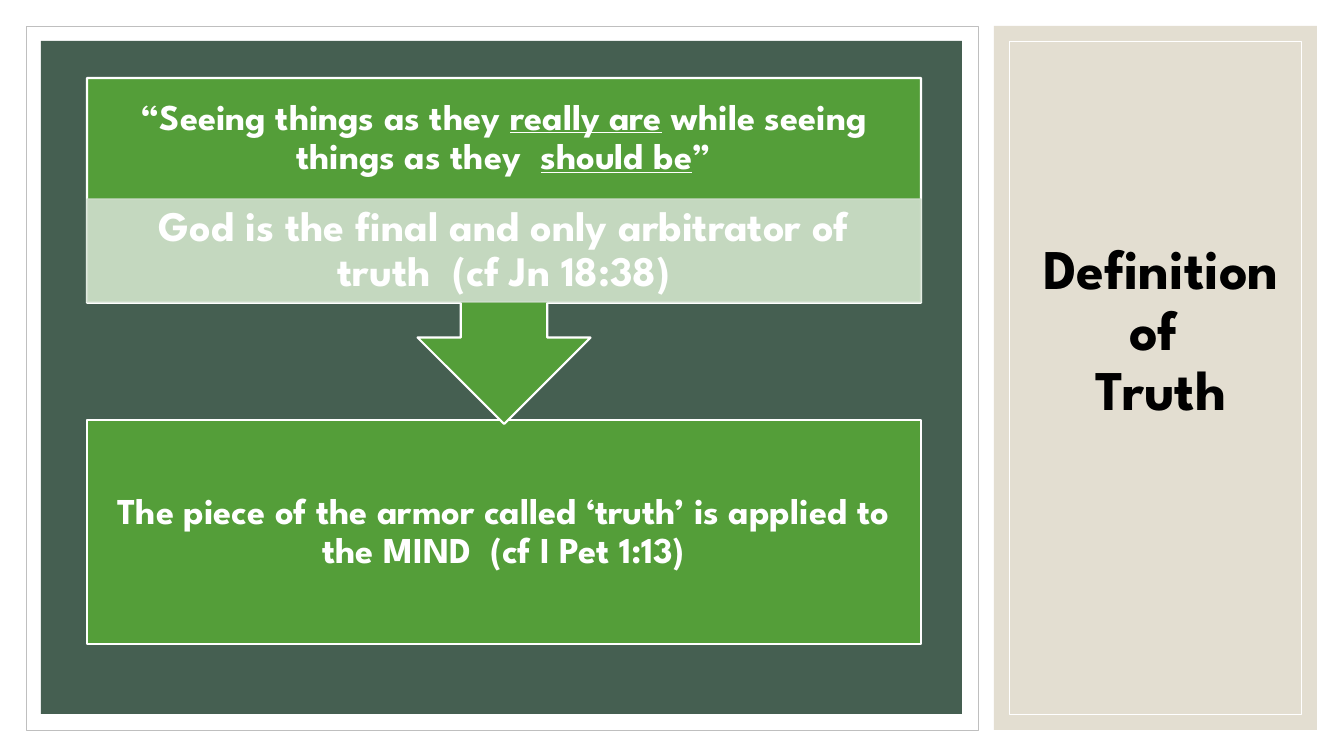
from pptx import Presentation
from pptx.dml.color import RGBColor
from pptx.enum.shapes import MSO_SHAPE
from pptx.enum.text import MSO_ANCHOR, PP_ALIGN
from pptx.oxml.ns import qn
from pptx.util import Pt
from lxml import etree

RECT, CALLOUT = MSO_SHAPE.RECTANGLE, MSO_SHAPE.UP_ARROW_CALLOUT
MIDDLE, BOTTOM = MSO_ANCHOR.MIDDLE, MSO_ANCHOR.BOTTOM
CENTER = PP_ALIGN.CENTER
PX = 914400 / 100.8

THEME = dict(
    font="League Spartan", title=40, body=26, strip=30,
    white="FFFFFF", black="000000", border="BFBFBF", panel="455F51",
    sidebar="E3DED1", green="549E39", pale="D1DFCE",
)


def add_box(kind, x, y, w, h, fill=None, line=None, weight=0.5):
    s = shapes.add_shape(kind, *(round(v * PX) for v in (x, y, w, h)))
    s.shadow.inherit = False
    if fill:
        s.fill.solid()
        s.fill.fore_color.rgb = RGBColor.from_string(THEME[fill])
    else:
        s.fill.background()
    if line:
        s.line.color.rgb = RGBColor.from_string(THEME[line])
        s.line.width = Pt(weight)
    else:
        s.line.fill.background()
    return s


def write(s, size, color, anchor, inset_x, inset_y, *parts):
    """Parts alternate between plain and underlined text."""
    tf = s.text_frame
    tf.word_wrap = True
    tf.vertical_anchor = anchor
    tf.margin_left = tf.margin_right = round(inset_x * PX)
    tf.margin_top = tf.margin_bottom = round(inset_y * PX)
    p = tf.paragraphs[0]
    p.text = parts[0]
    for i, part in enumerate(parts[1:], 1):
        r = p.add_run()
        r.text = part
        r.font.underline = i % 2 == 1
    p.alignment = CENTER
    p.line_spacing = 0.9
    p.font.name = THEME["font"]
    p.font.size = Pt(THEME[size])
    p.font.bold = True
    p.font.color.rgb = RGBColor.from_string(THEME[color])


prs = Presentation()
prs.slide_width, prs.slide_height = round(1344 * PX), round(756 * PX)
shapes = prs.slides.add_slide(prs.slide_layouts[6]).shapes

# Framed panel and sidebar
add_box(RECT, 26, 26, 952, 704, "white", "border")
add_box(RECT, 41, 41, 921, 673, "panel")
add_box(RECT, 994, 26, 323, 704, "sidebar")
add_box(RECT, 1009, 41, 292, 673, line="white")

# Title
title = shapes.add_textbox(*(round(v * PX) for v in (1015, 67, 292, 361)))
write(title, "title", "black", BOTTOM, 10, 5, "Definition of \vTruth")

# Application box
application = add_box(RECT, 87, 420, 834, 224, "green", "white", 1.5)
write(application, "body", "white", MIDDLE, 20, 20,
      "The piece of the armor called ‘truth’ is applied to the MIND  (cf I Pet 1:13)")

# Definition callout, turned so that its arrow points down
callout = add_box(CALLOUT, 87, 78, 834, 346, "green", "white", 1.5)
callout.rotation = 180
definition = shapes.add_textbox(*(round(v * PX) for v in (87, 78, 834, 121)))
write(definition, "body", "white", MIDDLE, 20, 20,
      "“Seeing things as they ", "really are",
      " while seeing things as they  ", "should be", "”")

# Translucent strip
strip = add_box(RECT, 87, 199, 834, 103, "pale", "pale", 1)
for color in strip._element.spPr.iter(qn("a:srgbClr")):
    etree.SubElement(color, qn("a:alpha"), val="90000")
write(strip, "strip", "white", MIDDLE, 23, 4,
      "God is the final and only arbitrator of truth  (cf Jn 18:38)")

prs.save("out.pptx")
